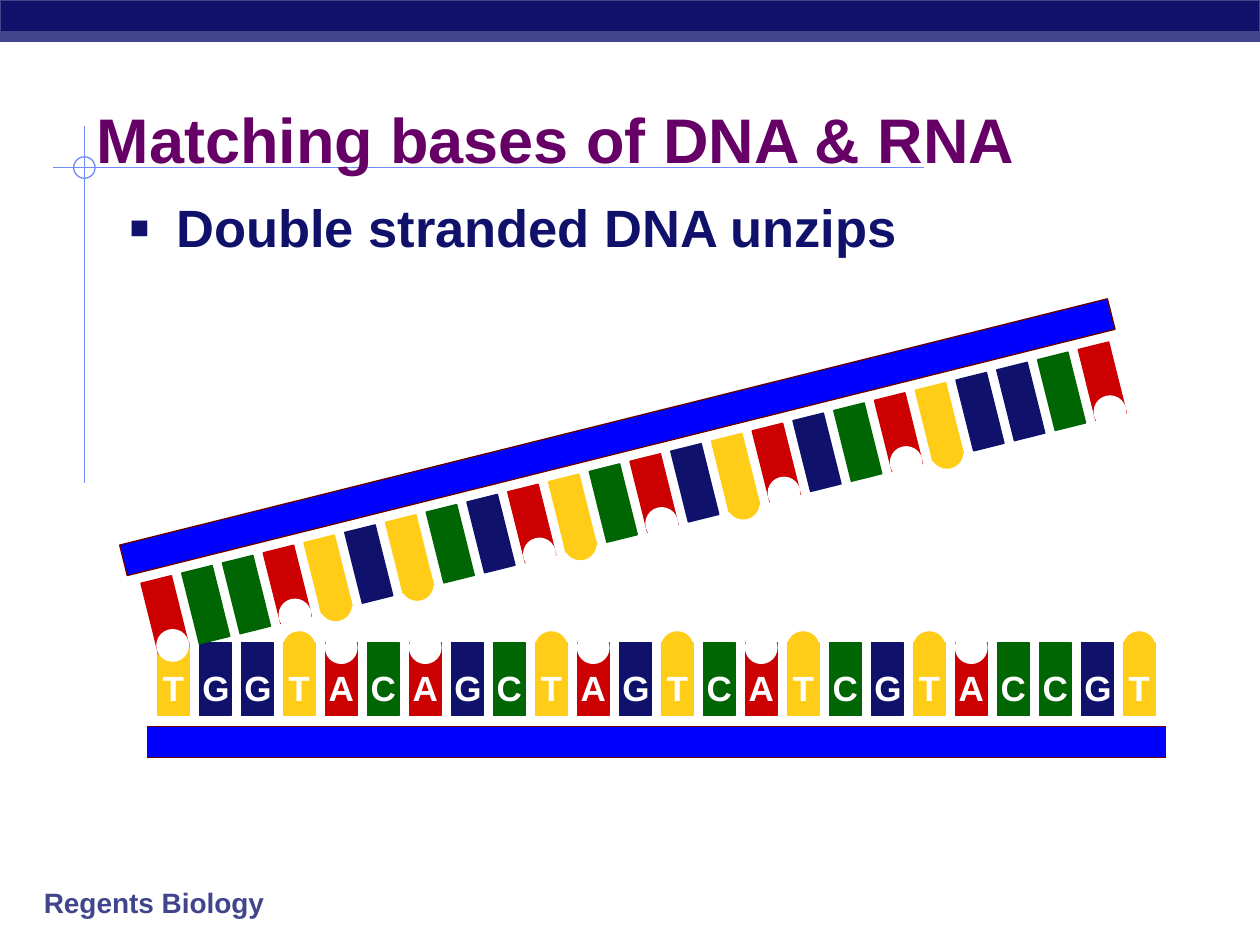
import math

import pptx
import pptx.util
from lxml import etree
from pptx.dml.color import RGBColor
from pptx.enum.shapes import MSO_CONNECTOR, MSO_SHAPE
from pptx.enum.text import MSO_ANCHOR, PP_ALIGN
from pptx.oxml.ns import qn
from pptx.util import Inches, Pt

TITLE = "Matching bases of DNA & RNA"
BULLET = "Double stranded DNA unzips"
FOOTER = "Regents Biology"
SEQUENCE = "TGGTACAGCTAGTCATCGTACCGT"
COMPLEMENT = {"A": "T", "T": "A", "C": "G", "G": "C"}

THEME = {
    "font": "Arial",
    "title": ("660066", 36), "body": ("0F116A", 30),
    "footer": ("40458C", 16), "label": ("FFFFFF", 20),
    "rule": "6F89F7", "bar": "0F116A", "bar_edge": "40458C",
    "backbone": "0000FF", "backbone_edge": "660000",
    "base": {"A": "CC0000", "T": "FFCC18", "C": "006604", "G": "0F116A"},
    "tip": {"A": "FFFFFF", "T": "FFCC18"},  # A has a notch, T a knob
}

BASE_W, BASE_H, TIP, PITCH = 0.25, 0.58, 0.25, 1 / 3
TIP_REACH = 0.25  # centre of a base to centre of its tip
BACKBONE = (8.08, 0.25)
RULES = [((0.42, 1.33), (7.33, 1.33)), ((0.67, 1), (0.67, 3.83))]


def add_shape(shapes, kind, center, size, fill, line, angle=0):
    (cx, cy), (w, h) = center, size
    sp = shapes.add_shape(kind, Inches(cx - w / 2), Inches(cy - h / 2),
                          Inches(w), Inches(h))
    sp.shadow.inherit = False
    if fill:
        sp.fill.solid()
        sp.fill.fore_color.rgb = RGBColor.from_string(fill)
    else:
        sp.fill.background()
    sp.line.color.rgb = RGBColor.from_string(line)
    sp.line.width = Pt(0.75)
    sp.rotation = angle % 360


def add_text(slide, box, text, style, anchor=MSO_ANCHOR.TOP, wrap=True):
    tf = slide.shapes.add_textbox(*map(Inches, box)).text_frame
    tf.word_wrap = wrap
    tf.vertical_anchor = anchor
    p = tf.paragraphs[0]
    r = p.add_run()
    r.text = text
    color, size = THEME[style]
    r.font.name, r.font.size, r.font.bold = THEME["font"], Pt(size), True
    r.font.color.rgb = RGBColor.from_string(color)
    return p


def add_bullet(p, char, color):
    pPr = p._p.get_or_add_pPr()
    pPr.set("marL", str(Inches(0.38)))
    pPr.set("indent", str(-Inches(0.38)))
    clr = etree.SubElement(pPr, qn("a:buClr"))
    etree.SubElement(clr, qn("a:srgbClr"), val=color)
    etree.SubElement(pPr, qn("a:buSzPct"), val="120000")
    etree.SubElement(pPr, qn("a:buFont"), typeface=THEME["font"])
    etree.SubElement(pPr, qn("a:buChar"), char=char)


def add_rule(slide, start, end):
    line = slide.shapes.add_connector(
        MSO_CONNECTOR.STRAIGHT, *map(Inches, start + end))
    line.line.color.rgb = RGBColor.from_string(THEME["rule"])
    line.line.width = Pt(1)
    etree.SubElement(line._element.spPr, qn("a:effectLst"))


def strand_centers(first, angle):
    """Centres of the bases, one pitch apart along the strand's angle."""
    a = math.radians(angle)
    return [(first[0] + i * PITCH * math.cos(a),
             first[1] + i * PITCH * math.sin(a)) for i in range(len(SEQUENCE))]


def add_strand(slide, bases, centers, angle, tip_side):
    """Draw the bases; tip_side is -1 for tips above, 1 for tips below."""
    a = math.radians(angle)
    for base, (cx, cy) in zip(bases, centers):
        color = THEME["base"][base]
        tip = THEME["tip"].get(base)
        shapes = slide.shapes.add_group_shape().shapes if tip else slide.shapes
        add_shape(shapes, MSO_SHAPE.RECTANGLE, (cx, cy), (BASE_W, BASE_H),
                  color, color, angle)
        if tip:
            reach = tip_side * TIP_REACH
            center = (cx - reach * math.sin(a), cy + reach * math.cos(a))
            add_shape(shapes, MSO_SHAPE.OVAL, center, (TIP, TIP), tip, tip, angle)


def add_backbone(slide, center, angle=0):
    add_shape(slide.shapes, MSO_SHAPE.RECTANGLE, center, BACKBONE,
              THEME["backbone"], THEME["backbone_edge"], angle)


def main():
    prs = pptx.Presentation()
    prs.slide_width, prs.slide_height = Inches(10), Inches(7.5)
    slide = prs.slides.add_slide(prs.slide_layouts[6])

    for start, end in RULES:
        add_rule(slide, start, end)
    add_shape(slide.shapes, MSO_SHAPE.OVAL, (0.67, 1.33), (0.17, 0.17),
              None, THEME["rule"])
    for top, height, fill in ((0, 0.33, "bar"), (0.25, 0.08, "bar_edge")):
        add_shape(slide.shapes, MSO_SHAPE.RECTANGLE, (5, top + height / 2),
                  (10, height), THEME[fill], THEME["bar_edge"])

    add_text(slide, (0.25, 6.98, 2, 0.37), FOOTER, "footer", MSO_ANCHOR.MIDDLE)
    add_text(slide, (0.67, 0.75, 8.5, 0.83), TITLE, "title")
    p = add_text(slide, (0.92, 1.5, 8.42, 2.33), BULLET, "body")
    p.space_before = Pt(3)
    add_bullet(p, "▪", THEME["body"][0])

    add_backbone(slide, (5.21, 5.89))
    centers = strand_centers((1.375, 5.39), 0)
    add_strand(slide, SEQUENCE, centers, 0, -1)
    for base, (cx, cy) in zip(SEQUENCE, centers):
        p = add_text(slide, (cx - 0.2, 5.24, 0.4, 0.43), base, "label",
                     MSO_ANCHOR.MIDDLE, wrap=False)
        p.alignment = PP_ALIGN.CENTER

    partner = [COMPLEMENT[base] for base in SEQUENCE]
    add_strand(slide, partner, strand_centers((1.31, 4.88), -14), -14, 1)
    add_backbone(slide, (4.9, 3.47), -14)
    prs.save("out.pptx")


if __name__ == "__main__":
    main()
